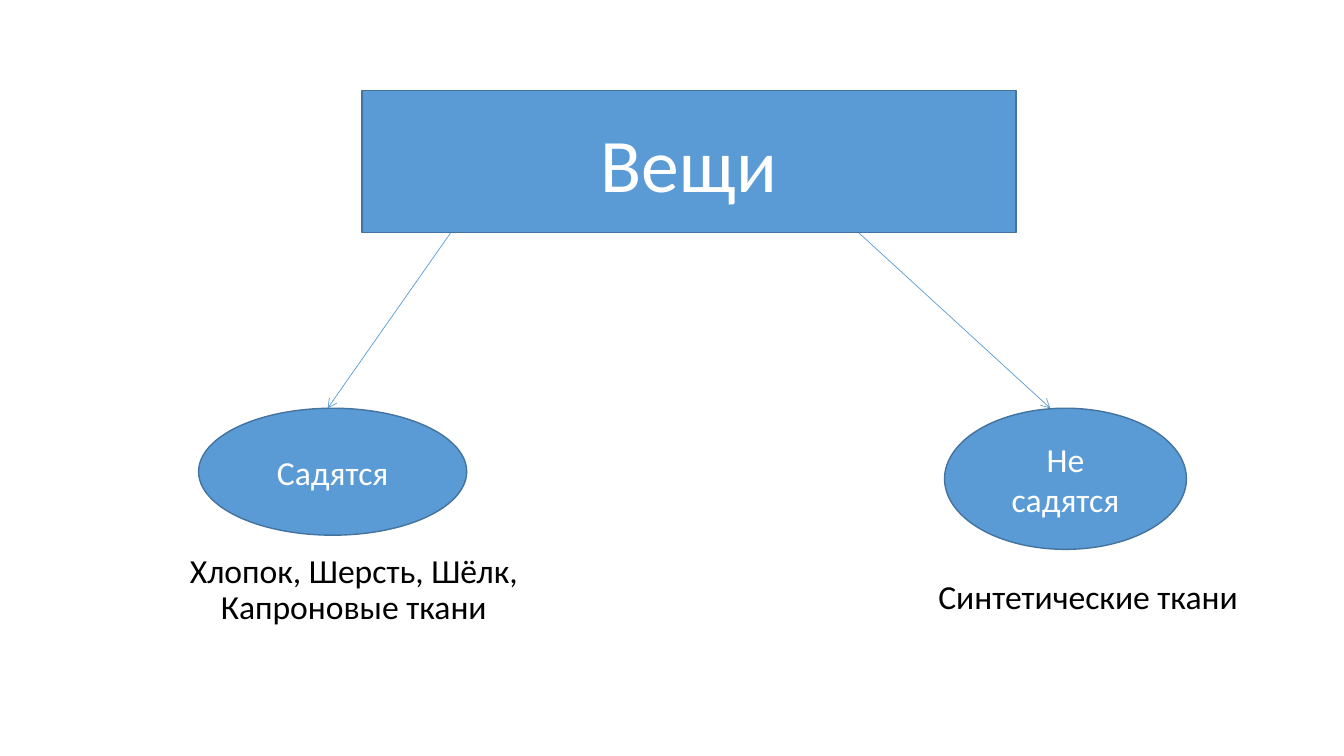
from dataclasses import dataclass

from lxml import etree
from pptx import Presentation
from pptx import util as u
from pptx.dml.color import RGBColor
from pptx.enum import shapes, text
from pptx.oxml.ns import qn

WIDTH, HEIGHT = u.Inches(13.333), u.Inches(7.5)
FONT = "Calibri"
BLUE, DARK_BLUE, WHITE, BLACK = "5B9BD5", "43739E", "FFFFFF", "000000"
RECTANGLE = shapes.MSO_SHAPE.RECTANGLE
OVAL = shapes.MSO_SHAPE.OVAL
CENTER, LEFT = text.PP_ALIGN.CENTER, text.PP_ALIGN.LEFT
HEADING_BOTTOM, OVAL_TOP = 30.8, 54


@dataclass
class Box:
    """Position and size in percent of the slide's width and height."""
    left: float
    top: float
    width: float
    height: float

    def lengths(self) -> tuple:
        return across(self.left), down(self.top), across(self.width), down(self.height)


@dataclass
class Node:
    label: str
    box: Box
    preset: int
    size: float = 24


@dataclass
class Caption:
    label: str
    box: Box
    alignment: int
    line_spacing: float = 1.0


@dataclass
class Arrow:
    start: float
    end: float


NODES = [
    Node("Вещи", Box(26.93, 12, 48.68, HEADING_BOTTOM - 12), RECTANGLE, 54),
    Node("Садятся", Box(14.78, OVAL_TOP, 19.95, 16.8), OVAL),
    Node("Не садятся", Box(70.28, OVAL_TOP, 18, 18.67), OVAL),
]
CAPTIONS = [
    Caption("Хлопок, Шерсть, Шёлк, Капроновые ткани",
            Box(6.9, 72.67, 38.85, 17.33), CENTER, 0.9),
    Caption("Синтетические ткани", Box(69.08, 75.47, 28.73, 6.67), LEFT),
]
ARROWS = [Arrow(63.9, 78.15), Arrow(33.53, 24.38)]


def across(percent: float) -> int:
    return round(WIDTH * percent / 100)


def down(percent: float) -> int:
    return round(HEIGHT * percent / 100)


def color(value: str) -> RGBColor:
    return RGBColor.from_string(value)


def write(shape, label: str, size: float, ink: str, alignment: int):
    frame = shape.text_frame
    frame.word_wrap = True
    frame.text = label
    paragraph = frame.paragraphs[0]
    paragraph.alignment = alignment
    font = paragraph.runs[0].font
    font.name, font.size = FONT, u.Pt(size)
    font.color.rgb = color(ink)
    return paragraph


def draw_node(slide, node: Node) -> None:
    shape = slide.shapes.add_shape(node.preset, *node.box.lengths())
    shape.shadow.inherit = False
    shape.fill.solid()
    shape.fill.fore_color.rgb = color(BLUE)
    shape.line.color.rgb = color(DARK_BLUE)
    shape.line.width = u.Pt(1)
    shape.text_frame.vertical_anchor = text.MSO_ANCHOR.MIDDLE
    write(shape, node.label, node.size, WHITE, CENTER)


def draw_caption(slide, caption: Caption) -> None:
    shape = slide.shapes.add_textbox(*caption.box.lengths())
    paragraph = write(shape, caption.label, 24, BLACK, caption.alignment)
    paragraph.line_spacing = caption.line_spacing


def draw_arrow(slide, arrow: Arrow) -> None:
    connector = slide.shapes.add_connector(
        shapes.MSO_CONNECTOR.STRAIGHT,
        across(arrow.start), down(HEADING_BOTTOM), across(arrow.end), down(OVAL_TOP))
    connector.line.color.rgb = color(BLUE)
    connector.line.width = u.Pt(0.5)
    etree.SubElement(connector.line._get_or_add_ln(), qn("a:tailEnd"), type="arrow")
    etree.SubElement(connector._element.spPr, qn("a:effectLst"))


def main() -> None:
    presentation = Presentation()
    presentation.slide_width, presentation.slide_height = WIDTH, HEIGHT
    slide = presentation.slides.add_slide(presentation.slide_layouts[6])
    for arrow in ARROWS:
        draw_arrow(slide, arrow)
    for node in NODES:
        draw_node(slide, node)
    for caption in CAPTIONS:
        draw_caption(slide, caption)
    presentation.save("out.pptx")


if __name__ == "__main__":
    main()
